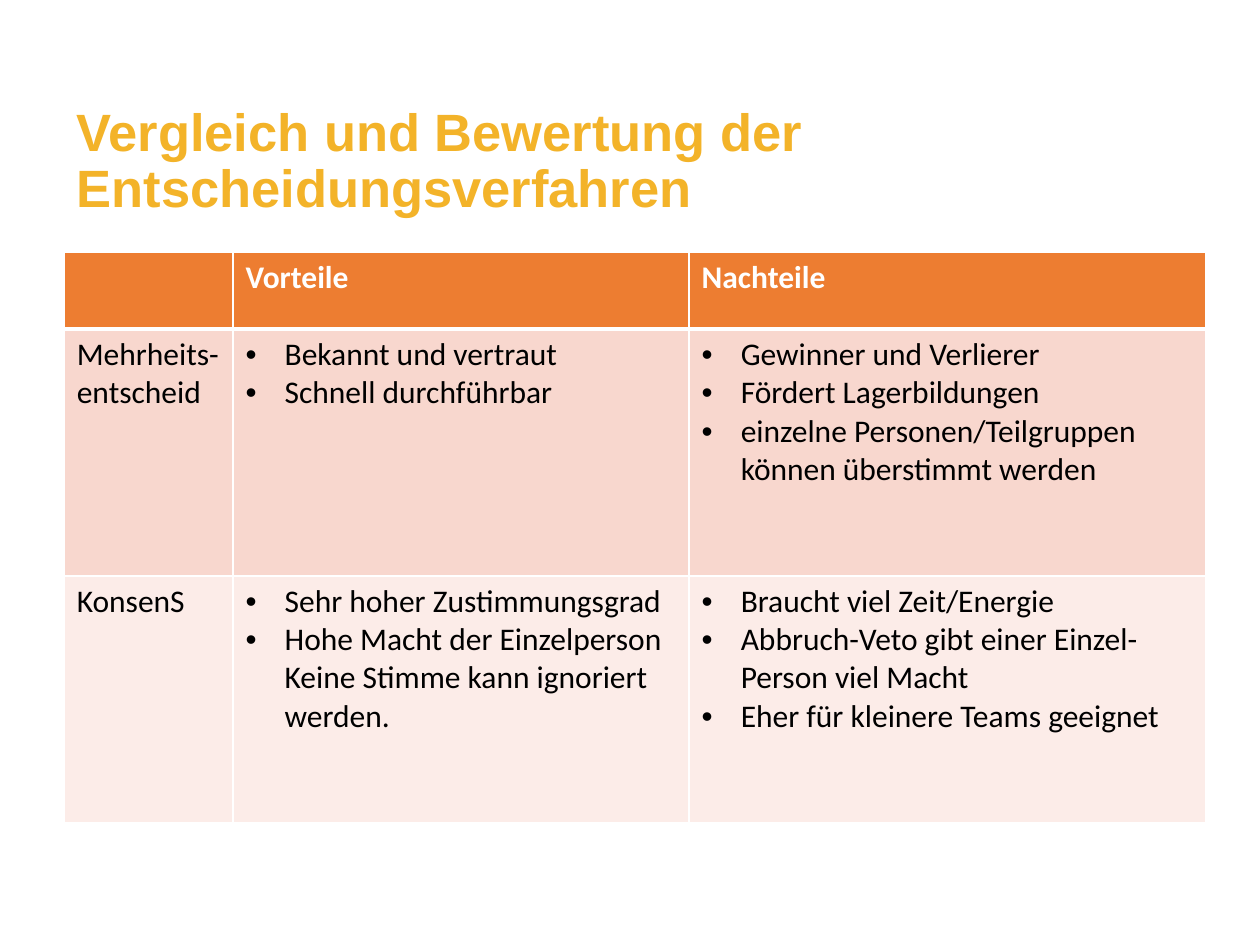
from lxml import etree
from pptx import Presentation
from pptx.dml.color import RGBColor
from pptx.enum.text import MSO_ANCHOR
from pptx.oxml.ns import qn
from pptx.util import Inches, Pt

TOP = MSO_ANCHOR.TOP
GOLD = RGBColor(0xF3, 0xB3, 0x29)
WHITE = RGBColor(0xFF, 0xFF, 0xFF)
BLACK = RGBColor(0x00, 0x00, 0x00)
ORANGE = RGBColor(0xED, 0x7D, 0x31)
ROSE = RGBColor(0xF8, 0xD7, 0xCE)
PALE = RGBColor(0xFC, 0xEC, 0xE8)

TITLE = "Vergleich und Bewertung der Entscheidungsverfahren"
HEAD = ["", "Vorteile", "Nachteile"]
ROWS = [
    ["Mehrheits-entscheid",
     ["Bekannt und vertraut", "Schnell durchführbar"],
     ["Gewinner und Verlierer", "Fördert Lagerbildungen",
      "einzelne Personen/Teilgruppen können überstimmt werden"]],
    ["KonsenS",
     ["Sehr hoher Zustimmungsgrad",
      "Hohe Macht der Einzelperson Keine Stimme kann ignoriert werden."],
     ["Braucht viel Zeit/Energie",
      "Abbruch-Veto gibt einer Einzel-Person viel Macht",
      "Eher für kleinere Teams geeignet"]],
]
COLS = [1.34, 3.62, 4.1]
HIGHS = [0.61, 1.96, 1.96]


def add_bullet(para):
    props = para._p.get_or_add_pPr()
    props.set("marL", str(Inches(0.31)))
    props.set("indent", str(-Inches(0.31)))
    etree.SubElement(props, qn("a:buFont"), typeface="Arial")
    etree.SubElement(props, qn("a:buChar"), char="•")


def put_text(frame, text, size=18, font="Calibri", color=BLACK, bold=False,
             space=None):
    """Write a string, or a list of strings as bullets."""
    lines = text if isinstance(text, list) else [text]
    for num, line in enumerate(lines):
        para = frame.paragraphs[0] if num == 0 else frame.add_paragraph()
        if isinstance(text, list):
            add_bullet(para)
        if space:
            para.line_spacing = space
        para.font.size = Pt(size)
        if line:
            run = para.add_run()
            run.text = line
            run.font.size = Pt(size)
            run.font.name = font
            run.font.bold = bold
            run.font.color.rgb = color


def set_edges(cell, base):
    """Draw white borders; base is the width of the lower one."""
    props = cell._tc.get_or_add_tcPr()
    for spot, (side, width) in enumerate(
            [("L", 1), ("R", 1), ("T", 1), ("B", base)]):
        line = etree.Element(qn("a:ln" + side), w=str(Pt(width)))
        fill = etree.SubElement(line, qn("a:solidFill"))
        etree.SubElement(fill, qn("a:srgbClr"), val=str(WHITE))
        props.insert(spot, line)


def add_title(slide):
    box = slide.shapes.add_textbox(
        Inches(0.51), Inches(0.79), Inches(9.06), Inches(0.79))
    frame = box.text_frame
    frame.word_wrap = True
    frame.vertical_anchor = TOP
    put_text(frame, TITLE, size=30, font="Arial", color=GOLD, bold=True,
             space=0.9)


def add_grid(slide):
    grid = slide.shapes.add_table(
        len(HIGHS), len(COLS), Inches(0.51), Inches(2),
        Inches(sum(COLS)), Inches(sum(HIGHS))).table
    for col, width in zip(grid.columns, COLS):
        col.width = Inches(width)
    for row, high in zip(grid.rows, HIGHS):
        row.height = Inches(high)
    fills = [ORANGE, ROSE, PALE]
    for r, (texts, fill) in enumerate(zip([HEAD] + ROWS, fills)):
        top = r == 0
        for c, text in enumerate(texts):
            cell = grid.cell(r, c)
            cell.fill.solid()
            cell.fill.fore_color.rgb = fill
            set_edges(cell, 3 if top else 1)
            put_text(cell.text_frame, text, bold=top,
                     color=WHITE if top else BLACK)


def main():
    deck = Presentation()
    deck.slide_width, deck.slide_height = Inches(10), Inches(7.5)
    slide = deck.slides.add_slide(deck.slide_layouts[6])
    add_title(slide)
    add_grid(slide)
    deck.save("out.pptx")


if __name__ == "__main__":
    main()
